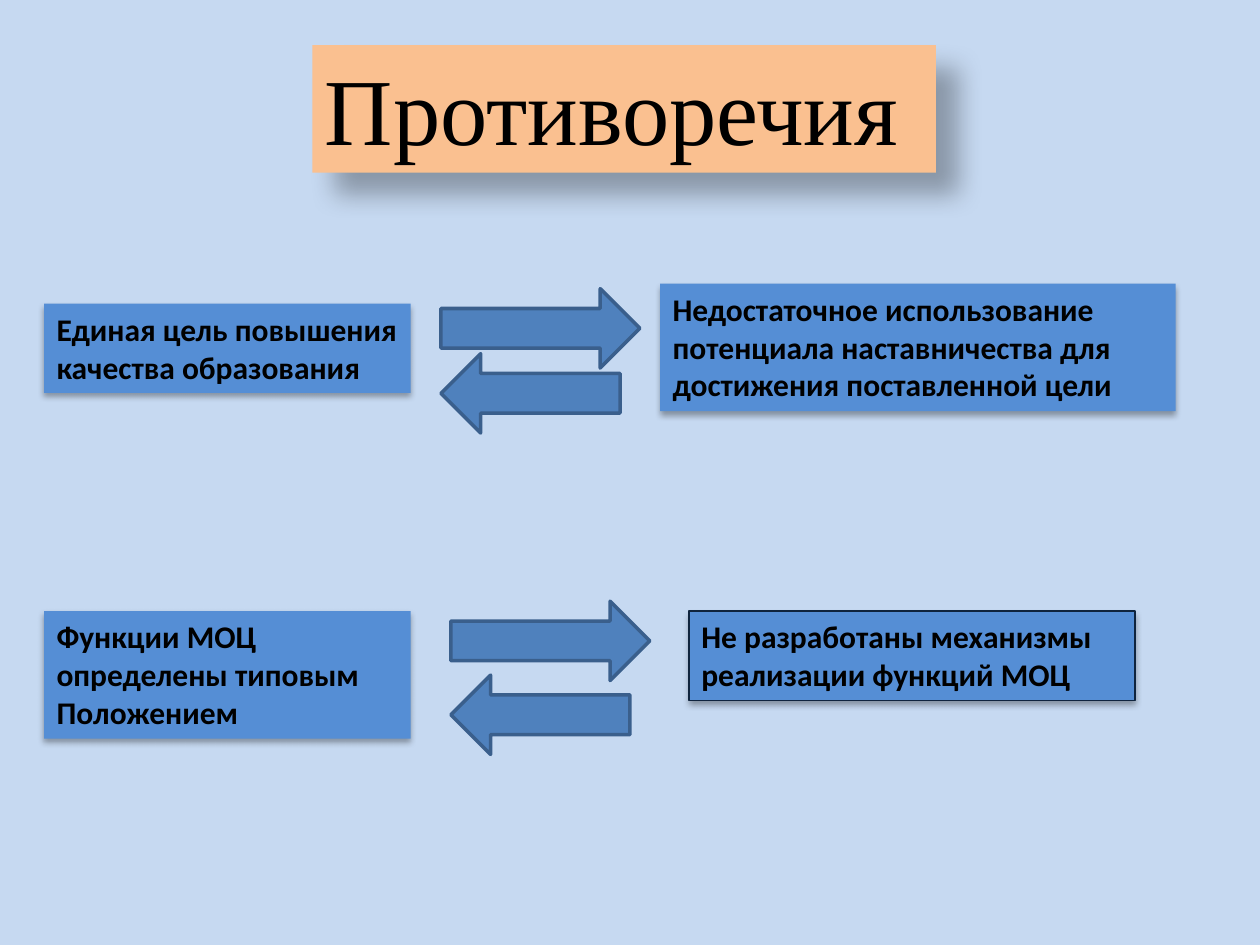
from lxml import etree
from pptx import Presentation
from pptx.dml.color import RGBColor
from pptx.enum.shapes import MSO_SHAPE
from pptx.enum.text import MSO_ANCHOR, MSO_AUTO_SIZE, PP_ALIGN
from pptx.oxml.ns import qn
from pptx.util import Cm, Pt

RECTANGLE = MSO_SHAPE.RECTANGLE
RIGHT_ARROW = MSO_SHAPE.RIGHT_ARROW
LEFT_ARROW = MSO_SHAPE.LEFT_ARROW
TOP = MSO_ANCHOR.TOP
GROW = MSO_AUTO_SIZE.SHAPE_TO_FIT_TEXT
LEFT = PP_ALIGN.LEFT

BACKGROUND = "C6D9F1"
TITLE_FILL = "FAC090"
CARD_FILL = "558ED5"
CARD_EDGE = "0F243E"
ARROW_FILL = "4F81BD"
ARROW_EDGE = "3A5F8C"
INK = "000000"

TITLE_SHADOW = (30, 15, 18, 45)
CARD_SHADOW = (32, 3.5, 2.2, 90)


def color(hex_code):
    """Return the colour for a hex string."""
    return RGBColor.from_string(hex_code)


def add_block(slide, kind, box, fill, edge=None, edge_width=0.75):
    """Add a filled preset shape in a box given in centimetres."""
    block = slide.shapes.add_shape(kind, *(Cm(length) for length in box))
    block.shadow.inherit = False
    block.fill.solid()
    block.fill.fore_color.rgb = color(fill)
    if edge:
        block.line.color.rgb = color(edge)
        block.line.width = Pt(edge_width)
    else:
        block.line.fill.background()
    return block


def cast_shadow(block, opacity, blur, distance, angle):
    """Give a block an outer shadow, with lengths in points."""
    effects = block._element.spPr.find(qn("a:effectLst"))
    shadow = etree.SubElement(
        effects, qn("a:outerShdw"), blurRad=str(Pt(blur)), dist=str(Pt(distance)),
        dir=str(angle * 60000), algn="tl", rotWithShape="0")
    tint = etree.SubElement(shadow, qn("a:srgbClr"), val=INK)
    etree.SubElement(tint, qn("a:alpha"), val=str(opacity * 1000))


def write(block, wording, font_name, size, bold=False):
    """Write left-aligned wording from the top of a block."""
    frame = block.text_frame
    frame.word_wrap = True
    frame.auto_size = GROW
    frame.vertical_anchor = TOP
    paragraph = frame.paragraphs[0]
    paragraph.text = wording
    paragraph.alignment = LEFT
    font = paragraph.font
    font.name = font_name
    font.size = Pt(size)
    font.bold = bold
    font.color.rgb = color(INK)


def add_title(slide, box, wording):
    """Add the title plate."""
    plate = add_block(slide, RECTANGLE, box, TITLE_FILL)
    cast_shadow(plate, *TITLE_SHADOW)
    write(plate, wording, "Times New Roman", 54)


def add_card(slide, box, wording, edge=None):
    """Add one statement card."""
    card = add_block(slide, RECTANGLE, box, CARD_FILL, edge)
    cast_shadow(card, *CARD_SHADOW)
    write(card, wording, "Calibri", 18, bold=True)


def add_arrow_pair(slide, left, top, step):
    """Add two opposing arrows, the second one a step below the first."""
    for kind, width, offset in ((RIGHT_ARROW, 4.01, 0), (LEFT_ARROW, 3.61, step)):
        add_block(slide, kind, (left, top + offset, width, 1.6),
                  ARROW_FILL, ARROW_EDGE, 2)


def add_contradiction(slide, left, top, aim, obstacle, arrows):
    """Add an aim, an obstacle and the arrows between them, relative to a corner."""
    for (x, y, width, height), *content in (aim, obstacle):
        add_card(slide, (left + x, top + y, width, height), *content)
    x, y, step = arrows
    add_arrow_pair(slide, left + x, top + y, step)


def main():
    """Build and save the slide."""
    deck = Presentation()
    deck.slide_width, deck.slide_height = Cm(25.4), Cm(19.05)
    slide = deck.slides.add_slide(deck.slide_layouts[6])
    slide.background.fill.solid()
    slide.background.fill.fore_color.rgb = color(BACKGROUND)

    add_title(slide, (6.3, 0.91, 12.57, 2.57), "Противоречия")
    add_contradiction(
        slide, 0.89, 5.72,
        aim=((0, 0.4, 7.39, 1.8), "Единая цель повышения качества образования"),
        obstacle=((12.42, 0, 10.39, 2.57),
                  "Недостаточное использование потенциала наставничества "
                  "для достижения поставленной цели"),
        arrows=(8, 0.1, 1.31))
    add_contradiction(
        slide, 0.89, 12.12,
        aim=((0, 0.2, 7.39, 2.57), "Функции МОЦ определены типовым Положением"),
        obstacle=((13, 0.2, 8.99, 1.8),
                  "Не разработаны механизмы реализации функций МОЦ", CARD_EDGE),
        arrows=(8.2, 0, 1.49))
    deck.save("out.pptx")


if __name__ == "__main__":
    main()
